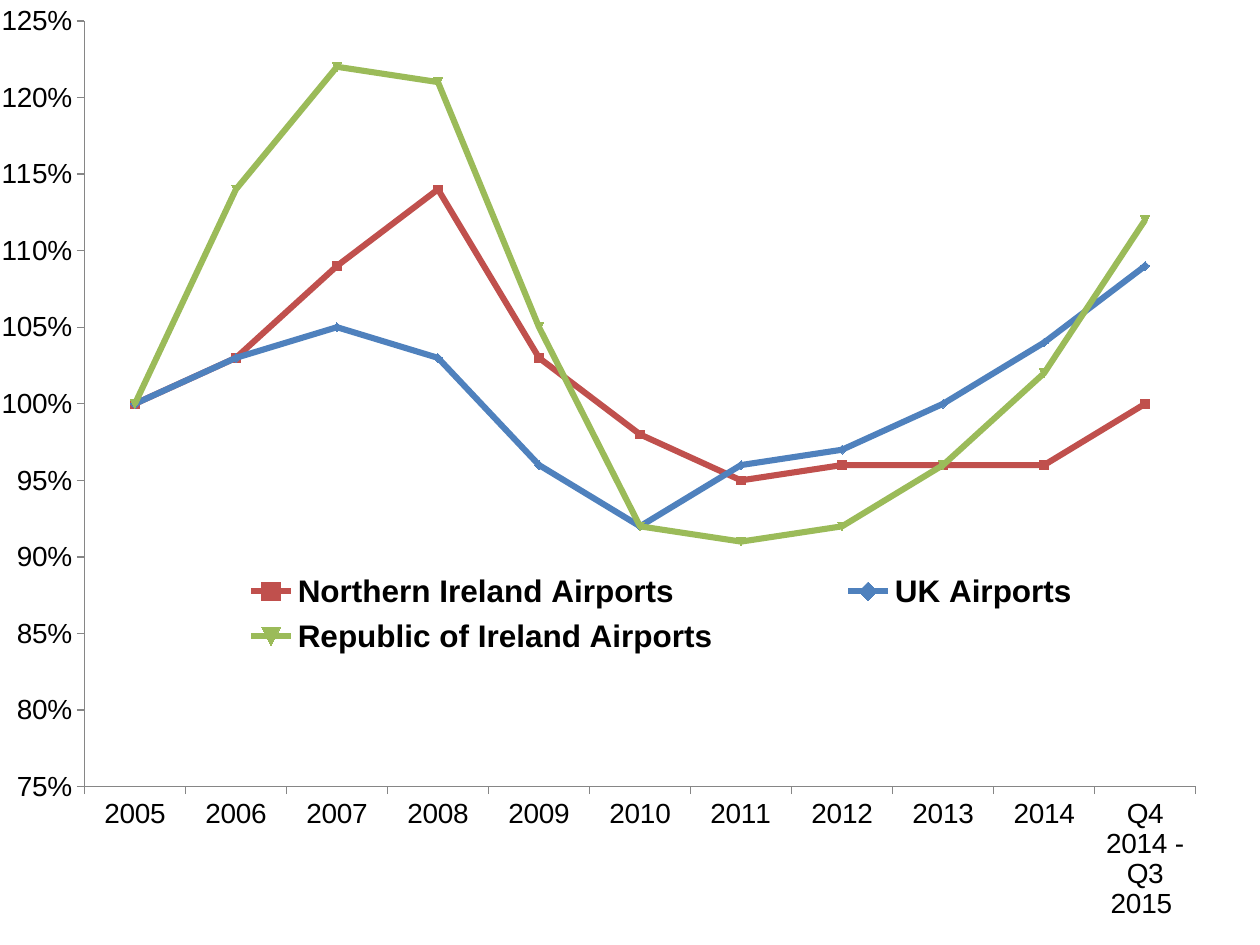
from dataclasses import dataclass

from pptx import Presentation
from pptx import oxml
from pptx.chart import data
from pptx.dml.color import RGBColor
from pptx.enum import chart as kinds
from pptx.util import Pt

RED = RGBColor(0xC0, 0x50, 0x4D)
BLUE = RGBColor(0x4F, 0x81, 0xBD)
GREEN = RGBColor(0x9B, 0xBB, 0x59)
GREY = RGBColor(0x86, 0x86, 0x86)
BLACK = RGBColor(0, 0, 0)
NS = "http://schemas.openxmlformats.org/drawingml/2006/chart"


@dataclass
class Line:
    name: str
    color: RGBColor
    vals: tuple[float, ...]


@dataclass
class Area:
    """A part of the chart, as fractions of its frame."""
    x: float
    y: float
    w: float
    h: float
    inner: bool = False


YEARS = [str(year) for year in range(2005, 2015)] + ["Q4 2014 - Q3 2015 "]
LINES = [
    Line("Northern Ireland Airports", RED,
         (1, 1.03, 1.09, 1.14, 1.03, 0.98, 0.95, 0.96, 0.96, 0.96, 1)),
    Line("UK Airports", BLUE,
         (1, 1.03, 1.05, 1.03, 0.96, 0.92, 0.96, 0.97, 1, 1.04, 1.09)),
    Line("Republic of Ireland Airports", GREEN,
         (1, 1.14, 1.22, 1.21, 1.05, 0.92, 0.91, 0.92, 0.96, 1.02, 1.12)),
]
PLOT = Area(0.067, 0.023, 0.882, 0.842, inner=True)
KEY = Area(0.1, 0.62, 0.85, 0.11)


def set_font(font, size: float, bold: bool = False) -> None:
    font.name = "Arial"
    font.size = Pt(size)
    font.bold = bold
    font.color.rgb = BLACK


def layout(area: Area):
    """Build the XML for a fixed place within the chart."""
    target = '<c:layoutTarget val="inner"/>' if area.inner else ""
    return oxml.parse_xml(
        f'<c:layout xmlns:c="{NS}"><c:manualLayout>{target}'
        '<c:xMode val="edge"/><c:yMode val="edge"/>'
        f'<c:x val="{area.x}"/><c:y val="{area.y}"/>'
        f'<c:w val="{area.w}"/><c:h val="{area.h}"/>'
        '</c:manualLayout></c:layout>')


def place(node, area: Area, index: int) -> None:
    for old in node.findall(f"{{{NS}}}layout"):
        node.remove(old)
    node.insert(index, layout(area))


def style_axis(axis) -> None:
    axis.has_major_gridlines = False
    axis.major_tick_mark = kinds.XL_TICK_MARK.OUTSIDE
    axis.minor_tick_mark = kinds.XL_TICK_MARK.NONE
    axis.format.line.color.rgb = GREY
    axis.format.line.width = Pt(0.75)
    set_font(axis.tick_labels.font, 16)


def style_line(series, line: Line) -> None:
    series.smooth = False
    series.format.line.color.rgb = line.color
    series.format.line.width = Pt(3.5)
    series.marker.size = 5
    series.marker.format.fill.solid()
    series.marker.format.fill.fore_color.rgb = line.color
    series.marker.format.line.color.rgb = line.color


def add_lines(slide) -> None:
    # Data
    table = data.CategoryChartData(number_format="0%")
    table.categories = YEARS
    for line in LINES:
        table.add_series(line.name, line.vals)
    chart = slide.shapes.add_chart(
        kinds.XL_CHART_TYPE.LINE_MARKERS, 0, 0, Pt(720), Pt(525), table).chart
    chart.has_title = False
    chart.font.name = "Calibri"
    chart.font.size = Pt(10)
    chart.font.color.rgb = BLACK

    # Plot and series
    plot = chart.plots[0]
    plot.vary_by_categories = False
    for series, line in zip(plot.series, LINES):
        style_line(series, line)
    place(chart._chartSpace.chart.plotArea, PLOT, 0)

    # Axes
    style_axis(chart.category_axis)
    style_axis(chart.value_axis)
    scale = chart.value_axis
    scale.minimum_scale, scale.maximum_scale = 0.75, 1.25
    scale.major_unit = 0.05
    scale.tick_labels.number_format = "0%"
    scale.tick_labels.number_format_is_linked = False

    # Legend
    chart.has_legend = True
    key = chart.legend
    key.position = kinds.XL_LEGEND_POSITION.RIGHT
    key.include_in_layout = False
    set_font(key.font, 18, bold=True)
    place(key._element, KEY, 1)


def main() -> None:
    deck = Presentation()
    deck.slide_width, deck.slide_height = Pt(720), Pt(540)
    add_lines(deck.slides.add_slide(deck.slide_layouts[6]))
    deck.save("out.pptx")


if __name__ == "__main__":
    main()
